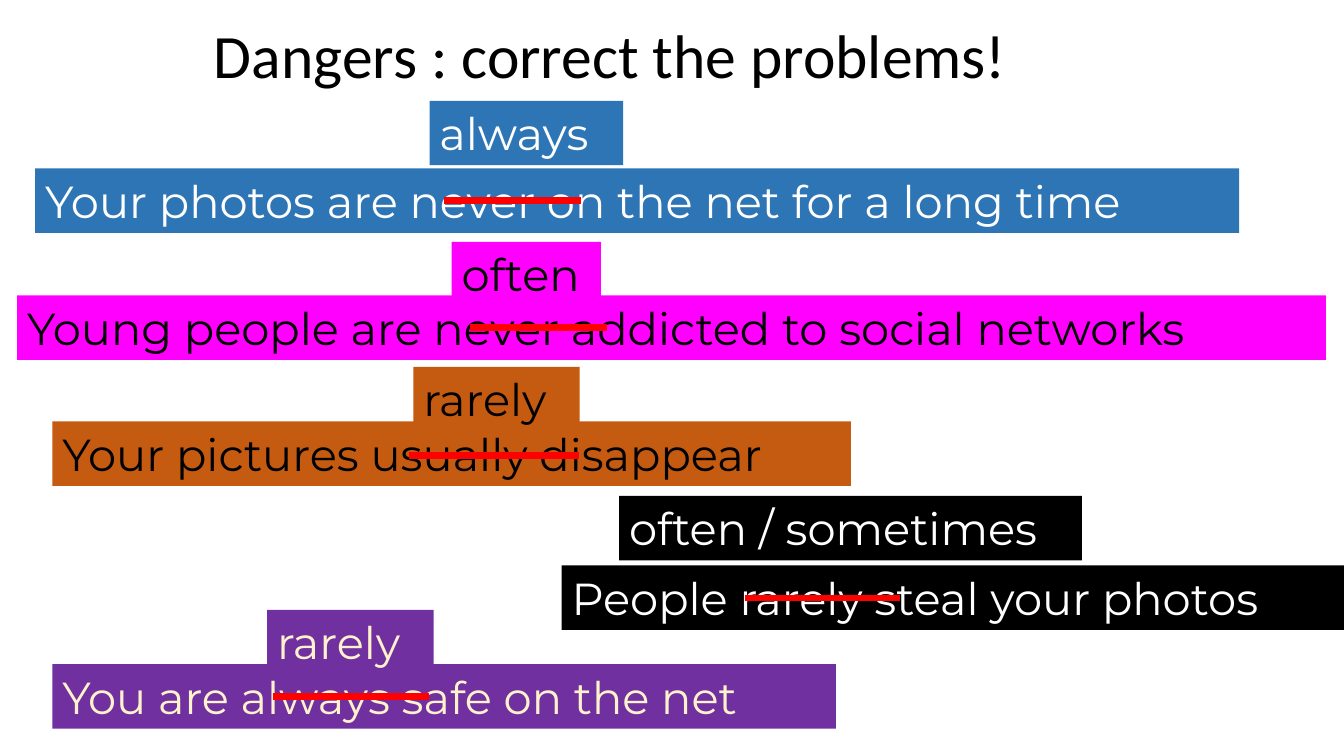
"""Build the slide on internet dangers with corrected frequency adverbs."""
from lxml import etree
from pptx import Presentation
from pptx.dml.color import RGBColor as RGB
from pptx.enum.shapes import MSO_CONNECTOR as CONN
from pptx.enum.text import MSO_ANCHOR as ANCHOR, PP_ALIGN as ALIGN
from pptx.oxml.ns import qn
from pptx.util import Inches, Pt

COLORS = {
    "blue": "2E75B6", "pink": "FF00FF", "orange": "C55A11", "purple": "7030A0",
    "black": "000000", "white": "FFFFFF", "cream": "FFF2CC", "red": "FF0000",
}
BAND_H = 0.64


def add_band(s, text, x, y, w, fill, color):
    tb = s.shapes.add_textbox(Inches(x), Inches(y), Inches(w), Inches(BAND_H))
    tb.fill.solid()
    tb.fill.fore_color.rgb = RGB.from_string(COLORS[fill])
    tf = tb.text_frame
    tf.word_wrap = True
    p = tf.paragraphs[0]
    p.text = text
    p.font.name = "Montserrat"
    p.font.size = Pt(32)
    p.font.color.rgb = RGB.from_string(COLORS[color])


def add_strike(s, x1, x2, y):
    line = s.shapes.add_connector(CONN.STRAIGHT, Inches(x1), Inches(y), Inches(x2), Inches(y))
    line.line.color.rgb = RGB.from_string(COLORS["red"])
    line.line.width = Pt(4.5)
    etree.SubElement(line._element.spPr, qn("a:effectLst"))


prs = Presentation()
prs.slide_width = Inches(13.33)
prs.slide_height = Inches(7.5)
s = prs.slides.add_slide(prs.slide_layouts[5])

title = s.shapes.title
title.left, title.top = Inches(2.02), Inches(-0.14)
title.width, title.height = Inches(11.5), Inches(1.45)
tf = title.text_frame
tf.vertical_anchor = ANCHOR.MIDDLE
p = tf.paragraphs[0]
p.text = "Dangers : correct the problems!"
p.alignment = ALIGN.LEFT
p.line_spacing = 0.9
p.font.name = "Calibri"
p.font.size = Pt(44)
p.font.color.rgb = RGB.from_string(COLORS["black"])

# fill, text colour, (sentence, x, y, w), (correction, x, y, w), (strike x1, x2, y)
dangers = [
    ("blue", "white", ("Your photos are never on the net for a long time", 0.35, 1.67, 11.94),
     ("always", 4.26, 1, 1.92), (4.4, 5.76, 1.99)),
    ("pink", "black", ("Young people are never addicted to social networks", 0.17, 2.93, 12.98),
     ("often", 4.48, 2.4, 1.48), (4.66, 6.02, 3.25)),
    ("orange", "black", ("Your pictures usually disappear", 0.52, 4.18, 7.92),
     ("rarely", 4.1, 3.64, 1.65), (4.06, 5.74, 4.52)),
    ("black", "white", ("People rarely steal your photos", 5.57, 5.61, 7.85),
     ("often / sometimes", 6.14, 4.92, 4.59), (7.39, 8.93, 5.93)),
    ("purple", "cream", ("You are always safe on the net", 0.52, 6.59, 7.77),
     ("rarely", 2.65, 6.05, 1.65), (2.71, 4.25, 6.91)),
]
for fill, color, sentence, correction, strike in dangers:
    add_band(s, *sentence, fill, color)
    add_band(s, *correction, fill, color)
    add_strike(s, *strike)

prs.save("out.pptx")
